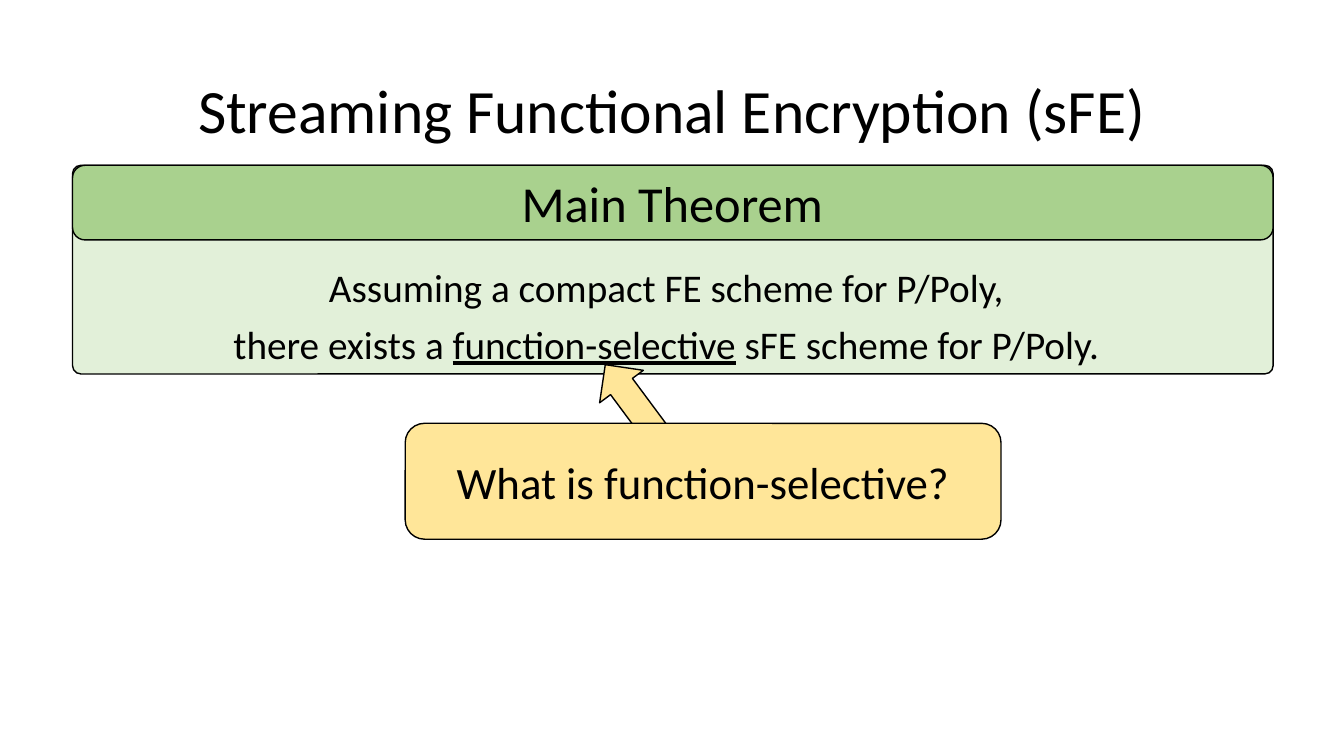
from pptx import Presentation
from pptx import util as u
from pptx.dml.color import RGBColor
from pptx.enum import shapes, text

COLOURS = {"ink": "000000", "pale": "E2F0D9", "green": "A9D18E", "yellow": "FFE699"}
ROUNDED = shapes.MSO_SHAPE.ROUNDED_RECTANGLE
MIDDLE = text.MSO_ANCHOR.MIDDLE


def colour(name):
    return RGBColor.from_string(COLOURS[name])


class TheoremSlide:
    """Places elements on a grid of 100 columns by 100 rows."""

    font = "Calibri"
    tight = {"alignment": text.PP_ALIGN.CENTER, "line_spacing": 0.9}
    spaced = {**tight, "space_before": u.Pt(10)}

    def __init__(self, deck):
        self.column = deck.slide_width / 100
        self.row = deck.slide_height / 100
        self.page = deck.slides.add_slide(deck.slide_layouts[5])

    def place(self, left, top, width, height):
        return (round(left * self.column), round(top * self.row),
                round(width * self.column), round(height * self.row))

    def fill_text(self, frame, lines, size, para_format, **frame_format):
        """Each line is a list of (wording, underlined) pairs."""
        for name, value in {"word_wrap": True, **frame_format}.items():
            setattr(frame, name, value)
        for number, line in enumerate(lines):
            para = frame.add_paragraph() if number else frame.paragraphs[0]
            for name, value in para_format.items():
                setattr(para, name, value)
            for wording, underlined in line:
                span = para.add_run()
                span.text = wording
                span_format = {"name": self.font, "size": u.Pt(size),
                               "underline": underlined}
                for name, value in span_format.items():
                    setattr(span.font, name, value)
                span.font.color.rgb = colour("ink")

    def title(self, area, wording):
        holder = self.page.shapes.title
        for name, value in zip(("left", "top", "width", "height"), self.place(*area)):
            setattr(holder, name, value)
        self.fill_text(holder.text_frame, [[(wording, None)]], 44, self.tight,
                       vertical_anchor=MIDDLE)

    def shape(self, kind, area, fill, corner=None, rotation=0):
        box = self.page.shapes.add_shape(kind, *self.place(*area))
        box.shadow.inherit = False
        box.rotation = rotation
        box.fill.solid()
        box.fill.fore_color.rgb = colour(fill)
        box.line.color.rgb = colour("ink")
        box.line.width = u.Pt(1)
        if corner is not None:
            box.adjustments[0] = corner
        return box

    def text(self, area, lines, size, **frame_format):
        box = self.page.shapes.add_textbox(*self.place(*area))
        self.fill_text(box.text_frame, lines, size, self.spaced, **frame_format)


def main():
    deck = Presentation()
    deck.slide_width, deck.slide_height = u.Inches(13.33), u.Inches(7.5)
    slide = TheoremSlide(deck)

    # Title
    slide.title((6.9, 5.33, 86.25, 19.33), "Streaming Functional Encryption (sFE)")

    # Theorem panel with its heading band
    left, top, width = 5.4, 21.87, 89.33
    slide.shape(ROUNDED, (left, top, width, 27.6), "pale", corner=0.04)
    slide.shape(ROUNDED, (left, top, width, 9.87), "green")

    # Theorem wording
    slide.text((6.9, 27.33, 86.25, 40.8), [
        [("Assuming a compact FE scheme for P/Poly,", None)],
        [("there exists a ", None), ("function-selective", True),
         (" sFE scheme for P/Poly.", None)],
    ], 28, margin_top=u.Inches(0.62), margin_right=u.Inches(0.22))
    slide.text((34.58, 23.07, 30.9, 8.8), [[("Main Theorem", None)]], 36)

    # Callout and its arrow
    slide.shape(shapes.MSO_SHAPE.DOWN_ARROW, (45, 47.07, 4.05, 11.87), "yellow",
                rotation=143.4)
    callout = slide.shape(ROUNDED, (30.15, 56, 44.33, 15.33), "yellow")
    slide.fill_text(callout.text_frame, [[("What is function-selective?", None)]], 32,
                    {"alignment": text.PP_ALIGN.CENTER}, vertical_anchor=MIDDLE)

    deck.save("out.pptx")


if __name__ == "__main__":
    main()
